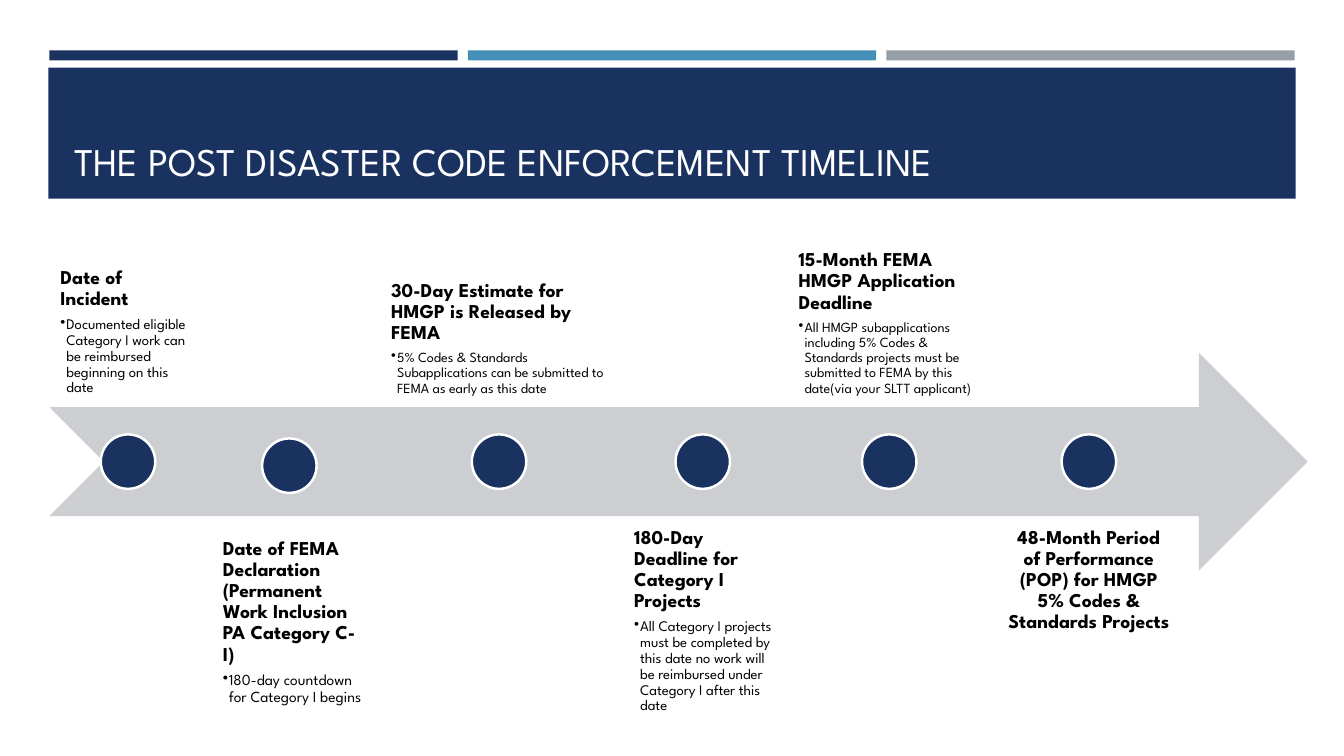
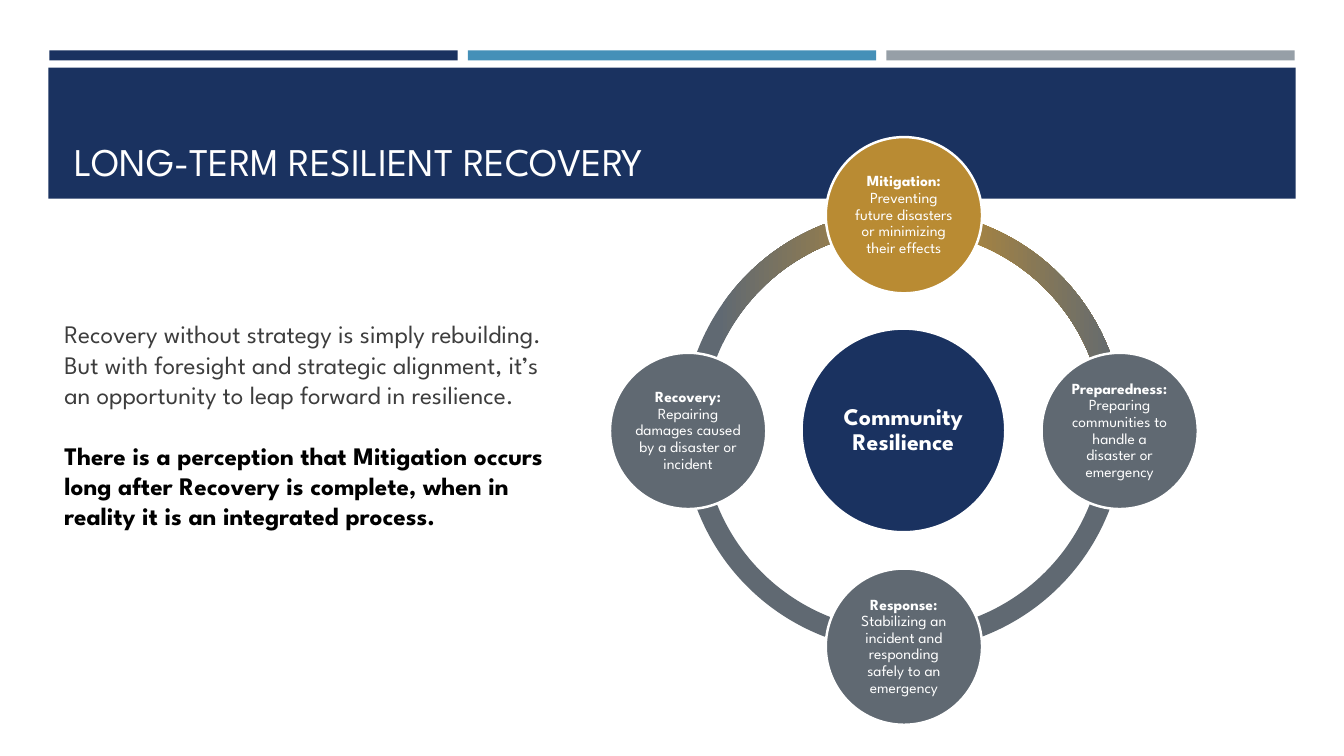
import pptx
import pptx.dml.color
import pptx.enum.shapes
import pptx.enum.text
import pptx.util
from lxml import etree

SHAPE = pptx.enum.shapes.MSO_SHAPE
ALIGN = pptx.enum.text.PP_ALIGN
ANCHOR = pptx.enum.text.MSO_ANCHOR
PX = 9144  # EMU per px, 100 px to the inch
FONT = "League Spartan"
COLORS = {
    "navy": "1A3260", "blue": "4590B8", "silver": "969FA7", "arrow": "CDCED2",
    "slate": "606972", "gold": "B98B33", "body": "3D3D3D",
    "black": "000000", "white": "FFFFFF",
}


def rgb(color):
    return pptx.dml.color.RGBColor.from_string(COLORS[color])


def write(frame, text, *, size, color="black", bold=False, lead="", align=ALIGN.LEFT,
          line=None, before=None, after=None, bullet=False):
    """Add one paragraph to the frame, with an optional bold lead-in."""
    first = frame.paragraphs[0]
    paragraph = frame.add_paragraph() if first.runs else first
    if bullet:
        properties = paragraph._p.get_or_add_pPr()
        properties.set("marL", str(6 * PX))
        properties.set("indent", str(-6 * PX))
        mark = etree.SubElement(properties, pptx.oxml.ns.qn("a:buChar"))
        mark.set("char", "•")
    paragraph.alignment = align
    if line:
        paragraph.line_spacing = line
    if before:
        paragraph.space_before = pptx.util.Pt(before)
    if after:
        paragraph.space_after = pptx.util.Pt(after)
    for words, weight in ((lead, True), (text, bold)):
        if words:
            run = paragraph.add_run()
            run.text = words
            run.font.name = FONT
            run.font.size = pptx.util.Pt(size)
            run.font.bold = weight
            run.font.color.rgb = rgb(color)


class Deck:
    """Holds the presentation, its style and the current slide."""

    def __init__(self):
        self.presentation = pptx.Presentation()
        self.presentation.slide_width = 1333 * PX
        self.presentation.slide_height = 750 * PX
        self.slide = None

    def start_slide(self, title):
        self.slide = self.presentation.slides.add_slide(self.presentation.slide_layouts[6])
        for column, color in enumerate(("navy", "blue", "silver")):
            self.shape(SHAPE.RECTANGLE, 49 + 415 * column, 50, 405, 10, color)
        self.shape(SHAPE.RECTANGLE, 48, 67, 1237, 130, "navy")
        frame = self.text_box(64, 77, 1206, 111, ANCHOR.BOTTOM)
        write(frame, title, size=28, color="white")

    def shape(self, preset, left, top, width, height, fill):
        shape = self.slide.shapes.add_shape(
            preset, left * PX, top * PX, width * PX, height * PX)
        shape.shadow.inherit = False
        shape.fill.solid()
        shape.fill.fore_color.rgb = rgb(fill)
        shape.line.fill.background()
        return shape

    def text_box(self, left, top, width, height, anchor, inset=None):
        box = self.slide.shapes.add_textbox(left * PX, top * PX, width * PX, height * PX)
        return self.set_frame(box.text_frame, anchor, inset)

    def set_frame(self, frame, anchor, inset=None):
        frame.word_wrap = True
        frame.vertical_anchor = anchor
        if inset is not None:
            frame.margin_left = frame.margin_right = inset * PX
            frame.margin_top = frame.margin_bottom = inset * PX
        return frame

    def circle(self, center_x, center_y, diameter, fill):
        """Draw a white-rimmed circle and return its text frame."""
        circle = self.shape(SHAPE.OVAL, center_x - diameter // 2, center_y - diameter // 2,
                            diameter, diameter, fill)
        circle.line.color.rgb = rgb("white")
        circle.line.width = pptx.util.Pt(1.75)
        return self.set_frame(circle.text_frame, ANCHOR.MIDDLE, 2)

    def ring_quarter(self, center_x, center_y, diameter, start, stops):
        """Draw a quarter ring clockwise from start degrees; two stops make a gradient."""
        arc = self.shape(SHAPE.BLOCK_ARC, center_x - diameter // 2, center_y - diameter // 2,
                         diameter, diameter, "slate")
        arc.adjustments[0] = start * 0.6
        arc.adjustments[1] = (start + 90) % 360 * 0.6
        arc.adjustments[2] = 0.046
        if stops:
            arc.fill.gradient()
            arc.fill.gradient_angle = 0
            for stop, (position, color) in zip(arc.fill.gradient_stops, stops):
                stop.position = position
                stop.color.rgb = rgb(color)

    def milestone(self, dot, box, anchor, heading, detail="", detail_size=10):
        frame = self.text_box(*box, anchor, inset=11)
        write(frame, heading, size=14, bold=True, line=0.9, after=5,
              align=ALIGN.LEFT if detail else ALIGN.CENTER)
        if detail:
            write(frame, detail, size=detail_size, line=0.9, after=2, bullet=True)
        self.circle(*dot, 54, "navy")


def build_timeline(deck):
    deck.start_slide("THE POST DISASTER CODE ENFORCEMENT TIMELINE")
    deck.shape(SHAPE.NOTCHED_RIGHT_ARROW, 49, 350, 1248, 216, "arrow")
    above, below = ANCHOR.BOTTOM, ANCHOR.TOP
    milestones = [
        ((127, 458), (49, 188, 156, 216), above, "Date of Incident",
         "Documented eligible Category I work can be reimbursed beginning on this date", 10.5),
        ((287, 462), (210, 523, 163, 176), below,
         "Date of FEMA Declaration (Permanent Work Inclusion PA Category C-I)",
         "180-day countdown for Category I begins", 11),
        ((495, 458), (377, 188, 236, 216), above,
         "30-Day Estimate for HMGP is Released by FEMA",
         "5% Codes & Standards Subapplications can be submitted to FEMA "
         "as early as this date"),
        ((697, 458), (618, 512, 159, 216), below, "180-Day Deadline for Category I Projects",
         "All Category I projects must be completed by this date no work will be "
         "reimbursed under Category I after this date", 10.5),
        ((882, 458), (781, 188, 202, 216), above, "15-Month FEMA HMGP Application Deadline",
         "All HMGP subapplications including 5% Codes & Standards projects must be "
         "submitted to FEMA by this date(via your SLTT applicant)"),
        ((1080, 458), (988, 512, 184, 216), below,
         "48-Month Period of Performance (POP) for HMGP 5% Codes & Standards Projects"),
    ]
    for milestone in milestones:
        deck.milestone(*milestone)


def build_recovery(deck):
    deck.start_slide("LONG-TERM RESILIENT RECOVERY")
    message = deck.text_box(54, 280, 514, 283, ANCHOR.MIDDLE)
    write(message, "Recovery without strategy is simply rebuilding. But with foresight and "
          "strategic alignment, it’s an opportunity to leap forward in resilience.",
          size=18, color="body")
    write(message, "There is a perception that Mitigation occurs long after Recovery is "
          "complete, when in reality it is an integrated process.",
          size=18, bold=True, before=22)

    center_x, center_y, orbit = 896, 427, 214
    quarters = [
        (180, ((0.08, "slate"), (0.55, "gold"))),
        (90, None),
        (0, None),
        (270, ((0.55, "gold"), (1, "slate"))),
    ]
    for start, stops in quarters:
        deck.ring_quarter(center_x, center_y, 438, start, stops)

    hub = deck.circle(center_x, center_y, 202, "navy")
    write(hub, "Community Resilience", size=17, color="white", bold=True,
          align=ALIGN.CENTER, line=0.9)
    phases = [
        (0, -1, "gold", "Mitigation: ", "Preventing future disasters or minimizing their effects"),
        (1, 0, "slate", "Preparedness: ",
         "Preparing communities to handle a disaster or emergency"),
        (0, 1, "slate", "Response: ",
         "Stabilizing an incident and responding safely to an emergency"),
        (-1, 0, "slate", "Recovery: ", "Repairing damages caused by a disaster or incident"),
    ]
    for across, down, fill, phase, meaning in phases:
        frame = deck.circle(center_x + across * orbit, center_y + down * orbit, 155, fill)
        write(frame, meaning, lead=phase, size=11, color="white",
              align=ALIGN.CENTER, line=0.9)


def main():
    deck = Deck()
    build_timeline(deck)
    build_recovery(deck)
    deck.presentation.save("out.pptx")


if __name__ == "__main__":
    main()
